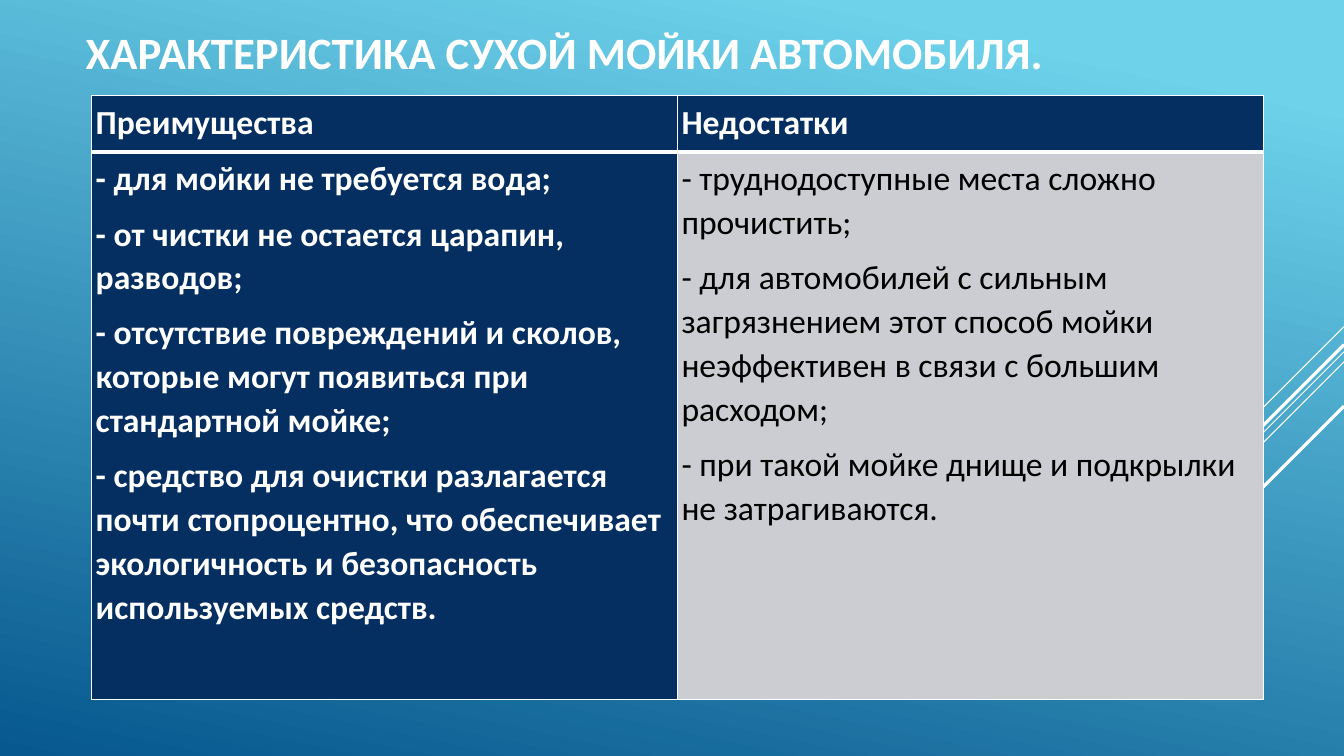
from lxml.etree import SubElement
from pptx import Presentation
from pptx.dml.color import RGBColor
from pptx.enum.shapes import MSO_CONNECTOR
from pptx.enum.text import MSO_ANCHOR, MSO_AUTO_SIZE, PP_ALIGN
from pptx.oxml.ns import qn
from pptx.util import Pt

PX = 9144  # 100 px to the inch
WHITE = RGBColor(0xFF, 0xFF, 0xFF)
BLACK = RGBColor(0, 0, 0)
NAVY = RGBColor(0x05, 0x2F, 0x61)
GREY = RGBColor(0xCC, 0xCD, 0xD2)
SKY = RGBColor(0x6E, 0xD2, 0xEB)
OCEAN = RGBColor(0x06, 0x58, 0x8E)

PAGE_WIDTH, PAGE_HEIGHT = 1333, 750
TITLE = "ХАРАКТЕРИСТИКА СУХОЙ МОЙКИ АВТОМОБИЛЯ."
TITLE_BOX = (75, 7, 1100, 88)
COLUMNS = [
    ("Преимущества", [
        "- для мойки не требуется вода;",
        "- от чистки не остается царапин, разводов;",
        "- отсутствие повреждений и сколов, которые могут появиться при стандартной мойке;",
        "- средство для очистки разлагается почти стопроцентно, что обеспечивает "
        "экологичность и безопасность используемых средств.",
    ], dict(fill=NAVY, color=WHITE, bold=True)),
    ("Недостатки", [
        "- труднодоступные места сложно прочистить;",
        "- для автомобилей с сильным загрязнением этот способ мойки неэффективен "
        "в связи с большим расходом;",
        "- при такой мойке днище и подкрылки не затрагиваются.",
    ], dict(fill=GREY, color=BLACK, bold=False)),
]
TABLE_LEFT, TABLE_TOP, COLUMN_WIDTH = 91, 95, 581
ROW_HEIGHTS = (56, 543)
CELL_MARGIN = 4
# Diagonals at 45°: y at the right edge, horizontal run, width in points
DIAGONALS = [(324, 100, 0.75), (349, 326, 0.75), (359, 207, 0.75),
             (342, 191, 2.25), (403, 139, 2.25)]


def write(frame, lines, size, color, bold, spacing=None, after=0):
    for index, line in enumerate(lines):
        para = frame.paragraphs[0] if index == 0 else frame.add_paragraph()
        para.alignment = PP_ALIGN.LEFT
        para.line_spacing = spacing
        para.space_after = Pt(after)
        span = para.add_run()
        span.text = line
        span.font.name = "Calibri"
        span.font.size = Pt(size)
        span.font.bold = bold
        span.font.color.rgb = color


def add_diagonal(page, top, run, width):
    line = page.shapes.add_connector(
        MSO_CONNECTOR.STRAIGHT, PAGE_WIDTH * PX, top * PX,
        (PAGE_WIDTH - run) * PX, (top + run) * PX)
    line.line.color.rgb = WHITE
    line.line.width = Pt(width)
    SubElement(line._element.spPr, qn("a:effectLst"))


def set_borders(cell, **widths):
    """Draw white borders; widths in points by side, in the order L, R, T, B."""
    properties = cell._tc.get_or_add_tcPr()
    for side, width in widths.items():
        border = SubElement(properties, qn(f"a:ln{side}"), w=str(Pt(width)))
        fill = SubElement(border, qn("a:solidFill"))
        SubElement(fill, qn("a:srgbClr"), val=str(WHITE))


def fill_cell(cell, lines, borders, fill, color, bold):
    cell.margin_left = cell.margin_right = CELL_MARGIN * PX
    cell.margin_top = cell.margin_bottom = CELL_MARGIN * PX
    set_borders(cell, **borders)
    cell.fill.solid()
    cell.fill.fore_color.rgb = fill
    write(cell.text_frame, lines, 24, color, bold, spacing=1.07, after=8)


def paint_background(page):
    fill = page.background.fill
    fill.gradient()
    fill.gradient_angle = 360 - 102
    for stop, position, color in zip(fill.gradient_stops, (0.1, 1), (SKY, OCEAN)):
        stop.position = position
        stop.color.rgb = color


def add_title(page):
    title = page.shapes.title
    title.left, title.top, title.width, title.height = (n * PX for n in TITLE_BOX)
    frame = title.text_frame
    frame.word_wrap = True
    frame.auto_size = MSO_AUTO_SIZE.NONE
    frame.vertical_anchor = MSO_ANCHOR.MIDDLE
    write(frame, [TITLE], 32, WHITE, True)


def add_comparison(page):
    table = page.shapes.add_table(
        len(ROW_HEIGHTS), len(COLUMNS), TABLE_LEFT * PX, TABLE_TOP * PX,
        COLUMN_WIDTH * len(COLUMNS) * PX, sum(ROW_HEIGHTS) * PX).table
    for row, height in zip(table.rows, ROW_HEIGHTS):
        row.height = height * PX
    for index, (heading, points, style) in enumerate(COLUMNS):
        table.columns[index].width = COLUMN_WIDTH * PX
        fill_cell(table.cell(0, index), [heading], dict(L=1, R=1, T=1, B=3),
                  fill=NAVY, color=WHITE, bold=True)
        fill_cell(table.cell(1, index), points, dict(L=1, R=1, T=3, B=1), **style)


def main():
    deck = Presentation()
    deck.slide_width, deck.slide_height = PAGE_WIDTH * PX, PAGE_HEIGHT * PX
    page = deck.slides.add_slide(deck.slide_layouts[5])
    paint_background(page)
    for diagonal in DIAGONALS:
        add_diagonal(page, *diagonal)
    add_title(page)
    add_comparison(page)
    deck.save("out.pptx")


if __name__ == "__main__":
    main()
